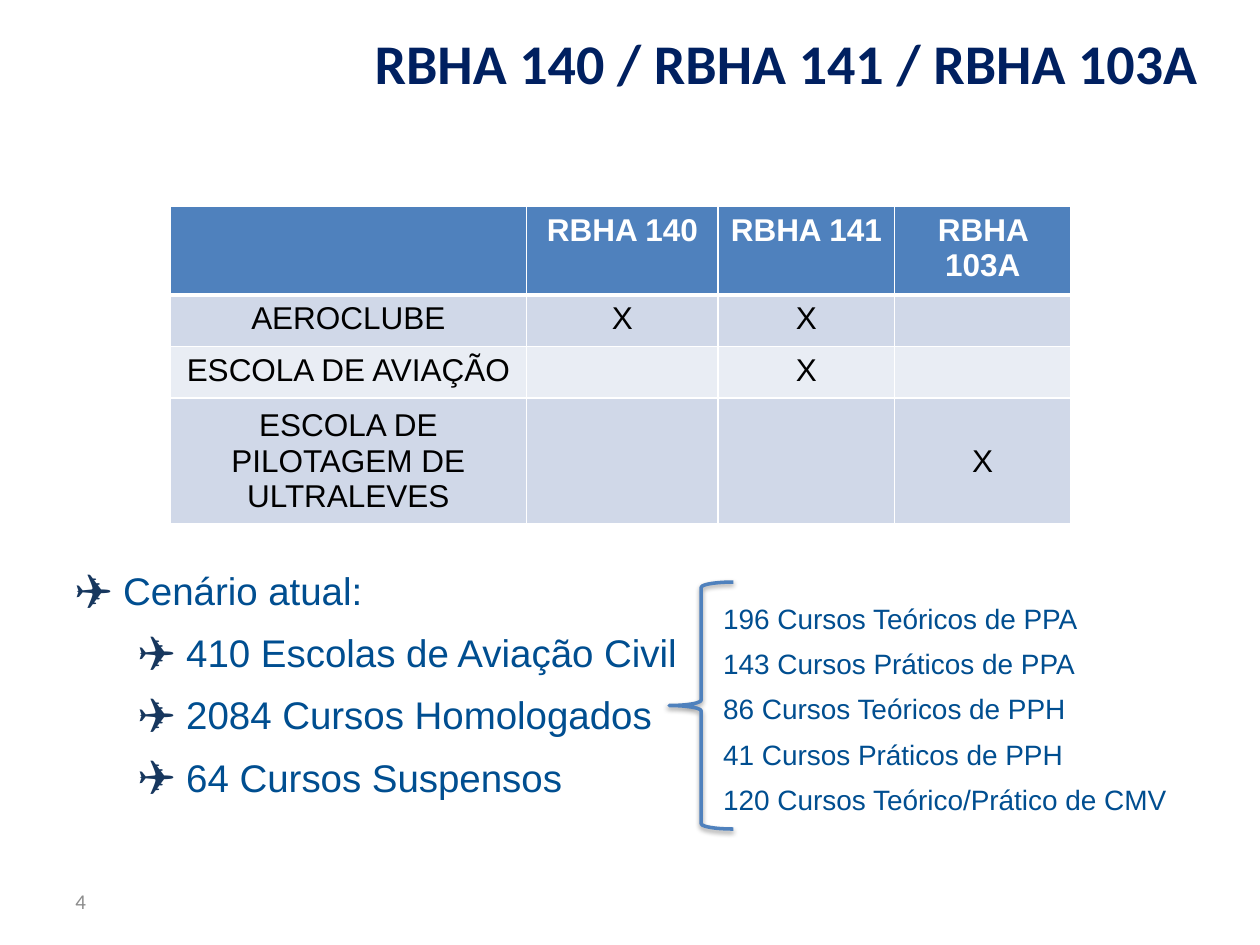
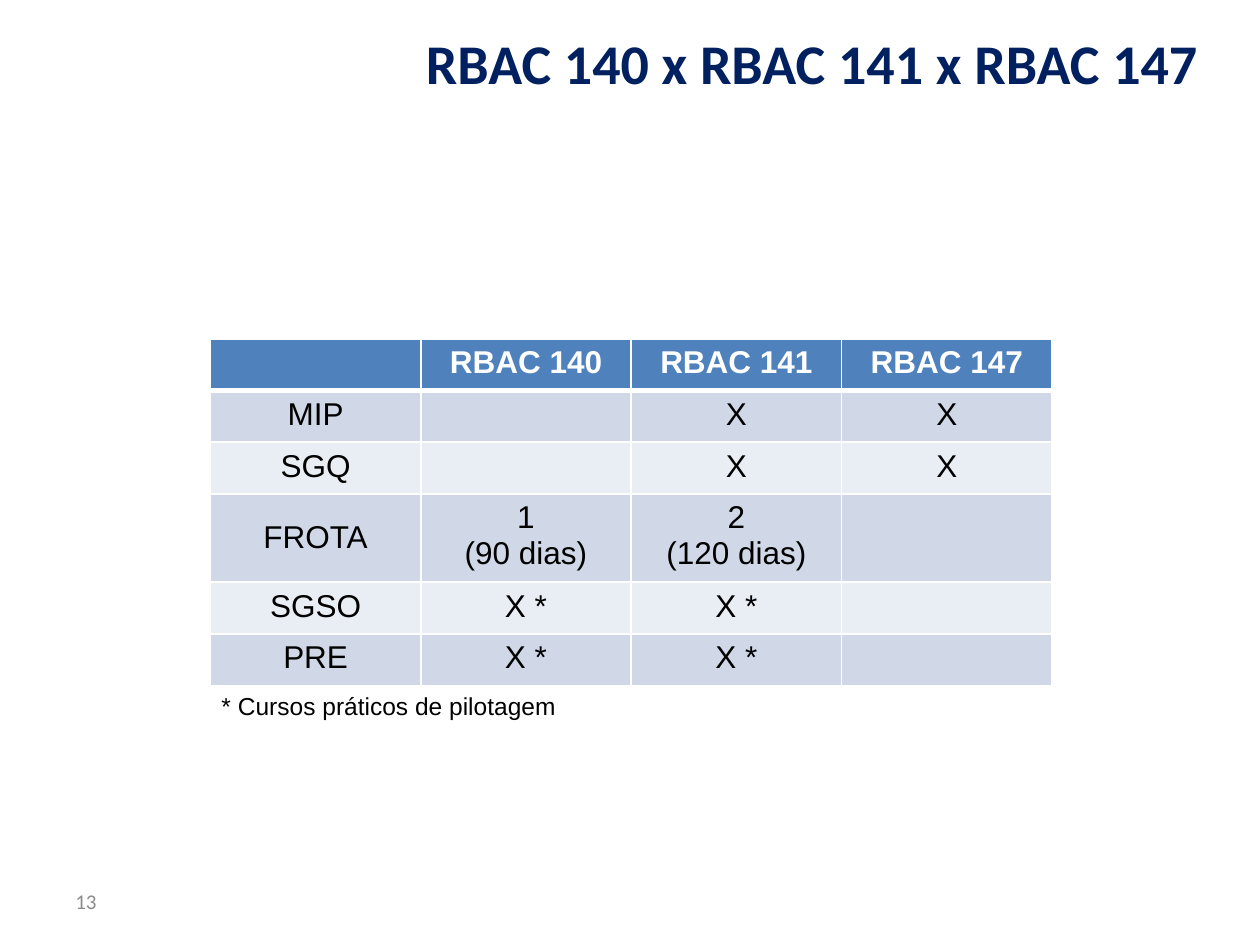
"""Builds two slides that compare flight school regulations."""
from dataclasses import dataclass

from lxml import etree
from pptx import Presentation
from pptx.dml.color import RGBColor
from pptx.enum.shapes import MSO_SHAPE
from pptx.enum.text import MSO_ANCHOR, MSO_AUTO_SIZE, PP_ALIGN
from pptx.oxml import parse_xml
from pptx.oxml.ns import nsdecls, qn
from pptx.util import Inches, Pt

LEFT, CENTER, RIGHT, JUSTIFY = PP_ALIGN.LEFT, PP_ALIGN.CENTER, PP_ALIGN.RIGHT, PP_ALIGN.JUSTIFY
TOP, MIDDLE = MSO_ANCHOR.TOP, MSO_ANCHOR.MIDDLE
NO_AUTOFIT = MSO_AUTO_SIZE.NONE
LEFT_BRACE = MSO_SHAPE.LEFT_BRACE
TITLE_ONLY = 5

NAVY, BLUE, TEXT_BLUE, BULLET_BLUE = "002060", "4F81BD", "004E90", "17375E"
WHITE, BLACK, GRAY = "FFFFFF", "000000", "8C8C8C"
BAND_FILLS = ("D0D8E8", "E9EDF4")
LINE_SPACING = 1.35
BULLET_INDENT = 0.38
LEVEL_STEP = 0.5


@dataclass(frozen=True)
class Box:
    """Position and size in inches."""
    left: float
    top: float
    width: float
    height: float

    def lengths(self) -> tuple:
        """Return the four values as lengths."""
        return tuple(Inches(value) for value in (self.left, self.top, self.width, self.height))


@dataclass(frozen=True)
class TextStyle:
    """Font and alignment of a paragraph."""
    size: int
    color: str
    name: str = "Arial"
    bold: bool = False
    alignment: int = JUSTIFY


@dataclass(frozen=True)
class Line:
    """One line of text, with a bullet when it has a level."""
    text: str
    level: int = 0


@dataclass(frozen=True)
class Grid:
    """A table with a header row and banded body rows."""
    left: float
    top: float
    widths: tuple
    heights: tuple
    rows: tuple
    middle_cells: tuple


TITLE_BOX = Box(2.57, 0.18, 7.04, 0.64)
NUMBER_BOX = Box(0.5, 6.95, 2.33, 0.4)
TITLE_STYLE = TextStyle(32, NAVY, "Calibri", True, RIGHT)
NUMBER_STYLE = TextStyle(12, GRAY, "Calibri", False, LEFT)
HEADER_STYLE = TextStyle(18, WHITE, bold=True, alignment=CENTER)
CELL_STYLE = TextStyle(18, BLACK, alignment=CENTER)

SCHOOL_GRID = Grid(
    1.35, 1.64, (2.83, 1.52, 1.4, 1.4), (0.69, 0.41, 0.41, 0.99),
    (("", "RBHA 140", "RBHA 141", "RBHA 103A"),
     ("AEROCLUBE", "X", "X", ""),
     ("ESCOLA DE AVIAÇÃO", "", "X", ""),
     ("ESCOLA DE PILOTAGEM DE ULTRALEVES", "", "", "X")),
    ((3, 0), (3, 3)))
REQUIREMENT_GRID = Grid(
    1.67, 2.69, (1.67,) * 4, (0.41, 0.41, 0.41, 0.7, 0.41, 0.41),
    (("", "RBAC 140", "RBAC 141", "RBAC 147"),
     ("MIP", "", "X", "X"),
     ("SGQ", "", "X", "X"),
     ("FROTA", "1\n(90 dias)", "2\n(120 dias)", ""),
     ("SGSO", "X *", "X *", ""),
     ("PRE", "X *", "X *", "")),
    ((3, 0),))
SCENARIO = (
    Line("Cenário atual:", 1),
    Line("410 Escolas de Aviação Civil", 2),
    Line("2084 Cursos Homologados", 2),
    Line("64 Cursos Suspensos", 2))
COURSES = (
    Line("196 Cursos Teóricos de PPA"),
    Line("143 Cursos Práticos de PPA"),
    Line("86 Cursos Teóricos de PPH"),
    Line("41 Cursos Práticos de PPH"),
    Line("120 Cursos Teórico/Prático de CMV"))


def rgb(color: str) -> RGBColor:
    """Turn a hex string into a colour."""
    return RGBColor.from_string(color)


def style_paragraph(paragraph, style: TextStyle) -> None:
    """Apply a text style to a paragraph."""
    paragraph.alignment = style.alignment
    font = paragraph.font
    font.name, font.size, font.bold = style.name, Pt(style.size), style.bold
    font.color.rgb = rgb(style.color)


def add_bullet(paragraph, level: int) -> None:
    """Give a paragraph an aeroplane bullet at the indent of its level."""
    properties = paragraph._p.get_or_add_pPr()
    properties.set("marL", str(Inches(BULLET_INDENT + LEVEL_STEP * (level - 1))))
    properties.set("indent", str(-Inches(BULLET_INDENT)))
    color = etree.SubElement(properties, qn("a:buClr"))
    etree.SubElement(color, qn("a:srgbClr"), val=BULLET_BLUE)
    etree.SubElement(properties, qn("a:buFont"), typeface="Arial")
    etree.SubElement(properties, qn("a:buChar"), char="✈")


def add_text(slide, box: Box, lines: tuple, style: TextStyle,
             spacing: float = LINE_SPACING, anchor: int = TOP) -> None:
    """Add a text box with one paragraph per line."""
    frame = slide.shapes.add_textbox(*box.lengths()).text_frame
    frame.word_wrap = True
    frame.vertical_anchor = anchor
    for index, line in enumerate(lines):
        paragraph = frame.add_paragraph() if index else frame.paragraphs[0]
        paragraph.text = line.text
        paragraph.line_spacing = spacing
        if line.level:
            add_bullet(paragraph, line.level)
        style_paragraph(paragraph, style)


def add_borders(cell, top: int, bottom: int) -> None:
    """Draw white cell borders, with given top and bottom widths in points."""
    properties = cell._tc.get_or_add_tcPr()
    for side, width in (("L", 1), ("R", 1), ("T", top), ("B", bottom)):
        properties.append(parse_xml(
            f'<a:ln{side} {nsdecls("a")} w="{Pt(width)}"><a:solidFill>'
            f'<a:srgbClr val="{WHITE}"/></a:solidFill></a:ln{side}>'))


def add_grid(slide, grid: Grid) -> None:
    """Add a table with a blue header and banded rows."""
    box = Box(grid.left, grid.top, sum(grid.widths), sum(grid.heights))
    table = slide.shapes.add_table(len(grid.rows), len(grid.widths), *box.lengths()).table
    for column, width in zip(table.columns, grid.widths):
        column.width = Inches(width)
    for row_index, (texts, height) in enumerate(zip(grid.rows, grid.heights)):
        table.rows[row_index].height = Inches(height)
        header = row_index == 0
        for column_index, text in enumerate(texts):
            cell = table.cell(row_index, column_index)
            cell.text = text
            add_borders(cell, 3 if row_index == 1 else 1, 3 if header else 1)
            cell.fill.solid()
            cell.fill.fore_color.rgb = rgb(BLUE if header else BAND_FILLS[(row_index - 1) % 2])
            if (row_index, column_index) in grid.middle_cells:
                cell.vertical_anchor = MIDDLE
            for paragraph in cell.text_frame.paragraphs:
                style_paragraph(paragraph, HEADER_STYLE if header else CELL_STYLE)


def add_brace(slide, box: Box) -> None:
    """Add a blue left brace with a soft shadow."""
    brace = slide.shapes.add_shape(LEFT_BRACE, *box.lengths())
    brace.fill.background()
    brace.line.color.rgb = rgb(BLUE)
    brace.line.width = Pt(2)
    brace.shadow.inherit = False
    effects = brace._element.spPr.find(qn("a:effectLst"))
    effects.append(parse_xml(
        f'<a:outerShdw {nsdecls("a")} blurRad="{Pt(3.1)}" dist="{Pt(1.6)}" dir="5400000" '
        f'rotWithShape="0"><a:srgbClr val="{BLACK}"><a:alpha val="38000"/></a:srgbClr>'
        '</a:outerShdw>'))


def add_slide(presentation, title: str, number: int):
    """Add a slide with its title and number."""
    slide = presentation.slides.add_slide(presentation.slide_layouts[TITLE_ONLY])
    shape = slide.shapes.title
    shape.left, shape.top, shape.width, shape.height = TITLE_BOX.lengths()
    frame = shape.text_frame
    frame.text = title
    frame.word_wrap = True
    frame.auto_size = NO_AUTOFIT
    frame.vertical_anchor = TOP
    style_paragraph(frame.paragraphs[0], TITLE_STYLE)
    add_text(slide, NUMBER_BOX, (Line(str(number)),), NUMBER_STYLE, 1.0, MIDDLE)
    return slide


def build_school_slide(presentation) -> None:
    """Build the slide on schools and current courses."""
    slide = add_slide(presentation, "RBHA 140 / RBHA 141 / RBHA 103A", 4)
    add_grid(slide, SCHOOL_GRID)
    add_text(slide, Box(0.5, 4.32, 5.1, 2.03), SCENARIO, TextStyle(22, TEXT_BLUE))
    add_text(slide, Box(5.64, 4.63, 3.75, 1.85), COURSES, TextStyle(16, TEXT_BLUE))
    add_brace(slide, Box(5.31, 4.62, 0.51, 1.96))


def build_requirement_slide(presentation) -> None:
    """Build the slide on requirements by regulation."""
    slide = add_slide(presentation, "RBAC 140 x RBAC 141 x RBAC 147", 13)
    add_grid(slide, REQUIREMENT_GRID)
    add_text(slide, Box(1.66, 5.35, 6.67, 0.38),
             (Line("* Cursos práticos de pilotagem"),), TextStyle(14, BLACK))


def main() -> None:
    """Build and save the presentation."""
    presentation = Presentation()
    presentation.slide_width, presentation.slide_height = Inches(10), Inches(7.5)
    build_school_slide(presentation)
    build_requirement_slide(presentation)
    presentation.save("out.pptx")


if __name__ == "__main__":
    main()
